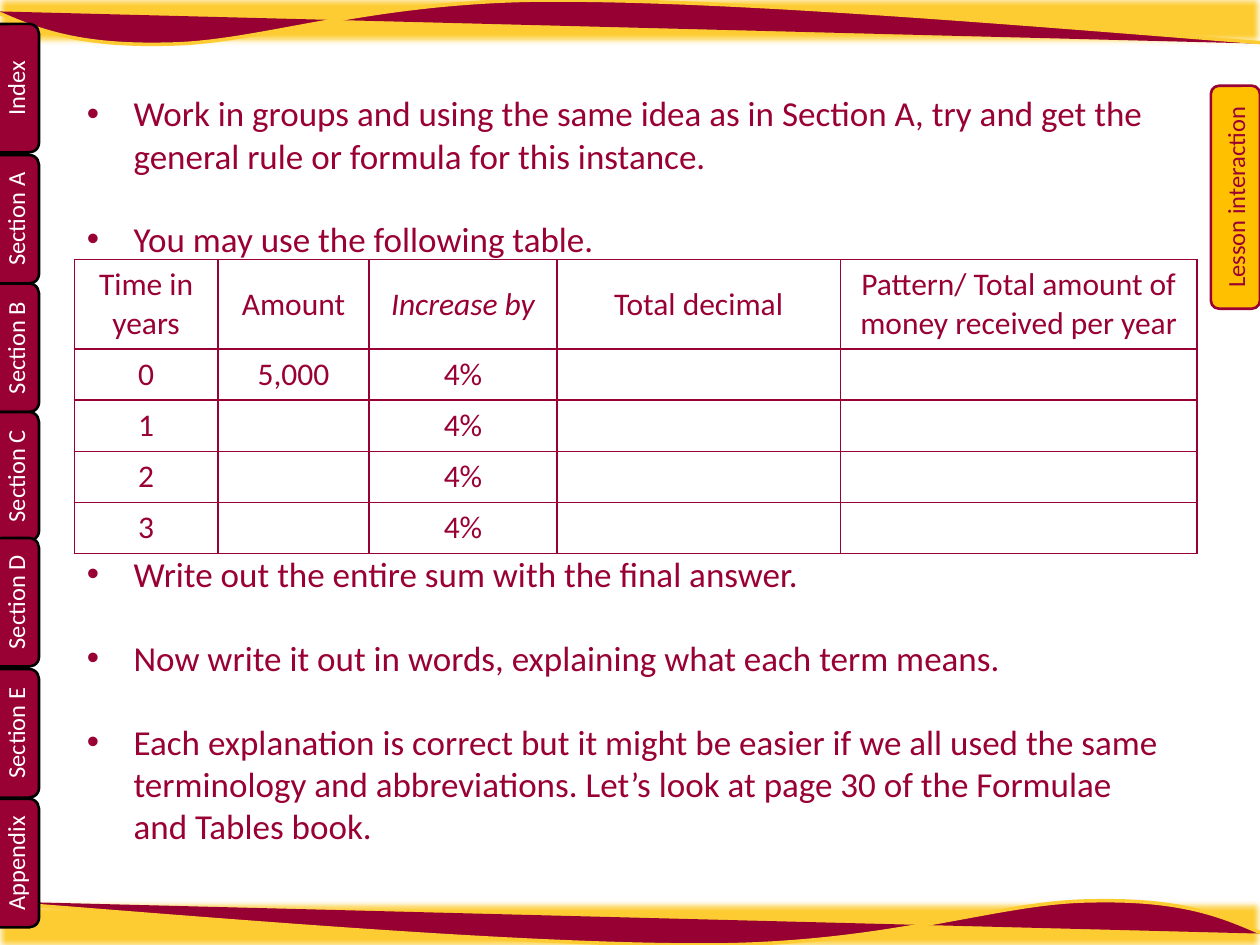
from lxml.etree import SubElement
from pptx import Presentation
from pptx.dml.color import RGBColor as RGB
from pptx.enum.shapes import MSO_SHAPE as SHAPE
from pptx.enum.text import MSO_ANCHOR as ANCHOR, MSO_AUTO_SIZE as FIT, PP_ALIGN as ALIGN
from pptx.oxml.ns import qn
from pptx.util import Inches, Pt

INK = {"wine": "990033", "wave": "970033", "gold": "FDCC33",
       "amber": "FFC000", "black": "000000", "white": "FFFFFF"}
FONT = "Calibri"
TABS = [("Section A", 1.04), ("Section B", 2.06), ("Section C", 3.08), ("Section D", 4.08),
        ("Section E", 5.12), ("Appendix", 6.15), ("Index", 0)]
LINE = 23.9
ITEMS = [
    ("Work in groups and using the same idea as in Section A, try and get the "
     "general rule or formula for this instance.", 0),
    ("You may use the following table.", 1),
    ("Write out the entire sum with the final answer.", 7),
    ("Now write it out in words, explaining what each term means.", 1),
    ("Each explanation is correct but it might be easier if we all used the same "
     "terminology and abbreviations. Let’s look at page 30 of the Formulae and Tables book.", 1),
]
HEAD = ["Time in years", "Amount", "Increase by", "Total decimal",
        "Pattern/ Total amount of money received per year"]
ROWS = [HEAD] + [[str(year), "" if year else "5,000", "4%", "", ""] for year in range(4)]
COLS = [1.14, 1.2, 1.49, 2.25, 2.83]
HIGH = [0.67] + [0.4] * 4
START = (10.15, 0.35)
CURVES = [
    ((8.01, 0.18), (5.86, 0), (4.39, 0)),
    ((2.92, 0), (2.08, 0.34), (1.34, 0.35)),
    ((0.6, 0.37), (0.28, 0.23), (-0.04, 0.09)),
]


def tint(text, size, color):
    """Format every run of a text frame."""
    for para in text.paragraphs:
        for run in para.runs:
            run.font.name, run.font.size = FONT, Pt(size)
            run.font.color.rgb = RGB.from_string(INK[color])


def paint(shape, fill, line=None, width=1.5):
    """Fill and outline a shape without a shadow."""
    shape.shadow.inherit = False
    shape.fill.solid()
    shape.fill.fore_color.rgb = RGB.from_string(INK[fill])
    if line:
        shape.line.color.rgb = RGB.from_string(INK[line])
        shape.line.width = Pt(width)
    else:
        shape.line.fill.background()


def add_wave(slide, start, curves):
    """Draw an open outline of Bézier curves."""
    pen = slide.shapes.build_freeform(*map(Inches, start), scale=1.0)
    pen.add_line_segments([tuple(map(Inches, dots[-1])) for dots in curves], close=False)
    wave = pen.convert_to_shape()
    for leg, dots in zip(list(wave._element.iter(qn("a:lnTo"))), curves):
        bend = leg.makeelement(qn("a:cubicBezTo"), {})
        for x, y in dots:
            SubElement(bend, qn("a:pt"), x=str(Inches(x) - wave.left), y=str(Inches(y) - wave.top))
        leg.getparent().replace(leg, bend)
    paint(wave, "wave", "gold", 2)


def add_band(slide, x, y, w, h, turn=False):
    """Draw a gold band with its wave, turned half round if asked."""
    band = slide.shapes.add_shape(SHAPE.RECTANGLE, Inches(x), Inches(y), Inches(w), Inches(h))
    paint(band, "gold")
    glow = band._element.spPr.find(qn("a:effectLst"))
    SubElement(glow, qn("a:softEdge"), rad=str(Inches(0.05)))

    def put(dot):
        """Move one point of the wave into the band."""
        a, b = dot
        return (x + w - 0.06 - a, y + h - 0.05 - b) if turn else (x + 0.04 + a, y + 0.05 + b)

    add_wave(slide, put(START), [[put(dot) for dot in dots] for dots in CURVES])


def add_tab(slide, label, x, y, w, h, fill, line, ink, anchor):
    """Add an upright tab that fills the given box."""
    left, top = x + (w - h) / 2, y + (h - w) / 2
    tab = slide.shapes.add_shape(SHAPE.ROUNDED_RECTANGLE, Inches(left), Inches(top),
                                 Inches(h), Inches(w))
    tab.rotation = 270
    paint(tab, fill, line)
    text = tab.text_frame
    text.text = label
    text.vertical_anchor = anchor
    text.paragraphs[0].alignment = ALIGN.CENTER
    tint(text, 14, ink)


def add_index(slide, x, y, w, h):
    """Stack section tabs of one height down from the given corner."""
    for label, drop in TABS:
        add_tab(slide, label, x, y + drop, w, h, "wine", "black", "white", ANCHOR.BOTTOM)


def add_list(slide, x, y, w, h):
    """Place the bulleted tasks in the body placeholder."""
    body = slide.placeholders[1]
    body.left, body.top, body.width, body.height = map(Inches, (x, y, w, h))
    text = body.text_frame
    text.word_wrap, text.auto_size = True, FIT.NONE
    text.vertical_anchor = ANCHOR.TOP
    text.text = "\n".join(item for item, gap in ITEMS)
    for para, (item, gap) in zip(text.paragraphs, ITEMS):
        para.space_before = Pt(gap * LINE)
        prop = para._p.get_or_add_pPr()
        prop.set("marL", str(Inches(0.37)))
        prop.set("indent", str(Inches(-0.37)))
        SubElement(prop, qn("a:buChar"), char="•")
    tint(text, 20, "wine")


def edge_cell(cell):
    """Draw a thin line on all four sides of a cell."""
    prop = cell._tc.get_or_add_tcPr()
    for i, side in enumerate(("lnL", "lnR", "lnT", "lnB")):
        line = prop.makeelement(qn("a:" + side), {"w": str(Pt(1))})
        fill = SubElement(line, qn("a:solidFill"))
        SubElement(fill, qn("a:srgbClr"), val=INK["wine"])
        prop.insert(i, line)


def add_grid(slide, x, y, w, h):
    """Add the table of yearly amounts."""
    grid = slide.shapes.add_table(len(ROWS), len(COLS), Inches(x), Inches(y),
                                  Inches(w), Inches(h)).table
    grid.first_row = grid.horz_banding = False
    for col, wide in zip(grid.columns, COLS):
        col.width = Inches(wide * w / sum(COLS))
    for row, high, words in zip(grid.rows, HIGH, ROWS):
        row.height = Inches(high * h / sum(HIGH))
        for cell, word in zip(row.cells, words):
            cell.fill.background()
            edge_cell(cell)
            cell.vertical_anchor = ANCHOR.MIDDLE
            cell.text_frame.text = word
            cell.text_frame.paragraphs[0].alignment = ALIGN.CENTER
            tint(cell.text_frame, 18, "wine")
    grid.cell(0, 2).text_frame.paragraphs[0].runs[0].font.italic = True


def main():
    """Build and save the slide."""
    deck = Presentation()
    deck.slide_width, deck.slide_height = Inches(10), Inches(7.5)
    slide = deck.slides.add_slide(deck.slide_layouts[1])
    title = slide.shapes.title._element
    title.getparent().remove(title)
    add_band(slide, -0.04, -0.05, 10.08, 0.42)
    add_band(slide, -0.04, 7.13, 10.08, 0.42, turn=True)
    add_index(slide, -0.16, 0.19, 0.47, 1.02)
    add_list(slide, 0.59, 0.68, 8.74, 6.16)
    add_grid(slide, 0.59, 2.06, 8.91, 2.27)
    add_tab(slide, "Lesson interaction", 9.61, 0.68, 0.39, 1.77,
            "amber", "wine", "wine", ANCHOR.MIDDLE)
    deck.save("out.pptx")


if __name__ == "__main__":
    main()
